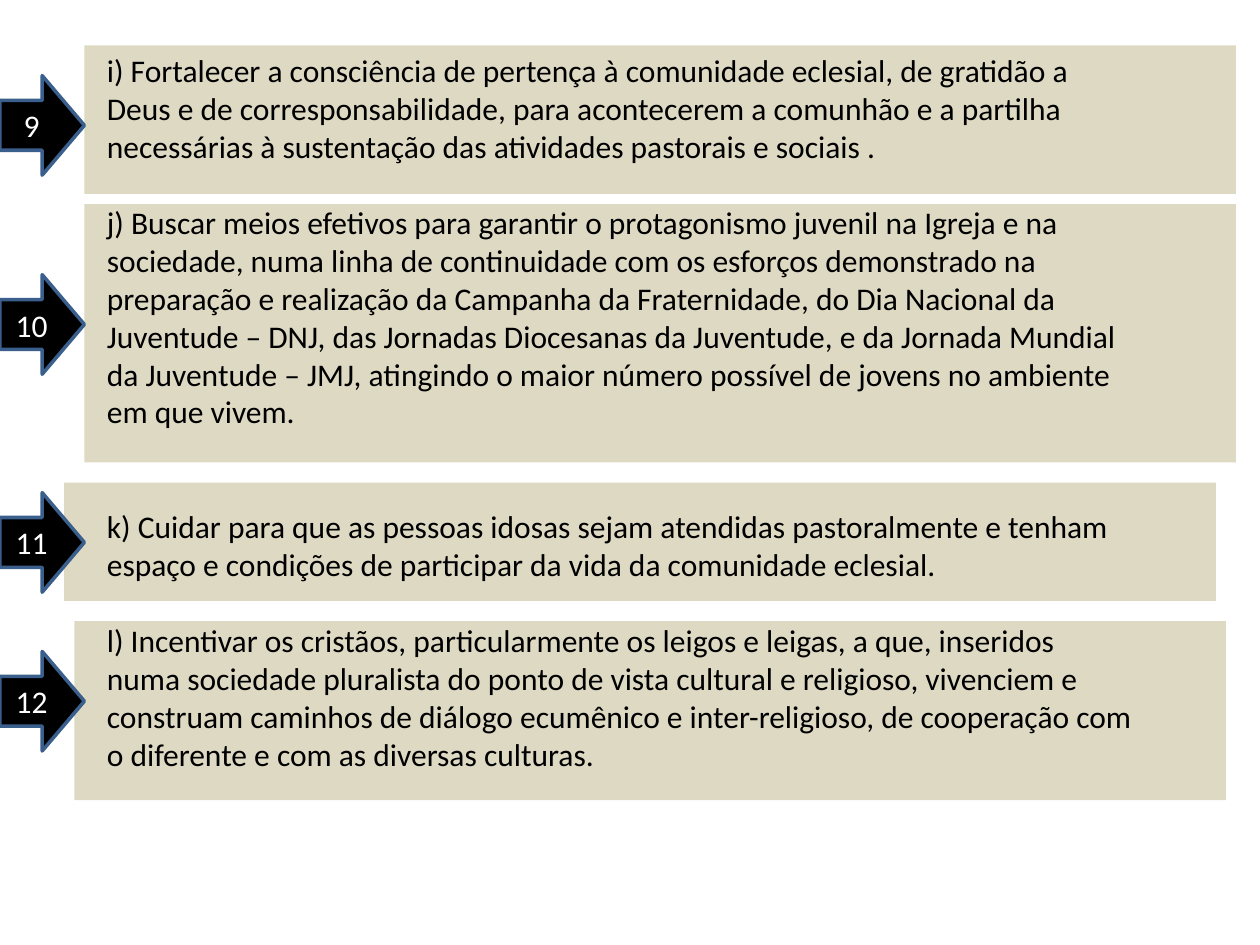
from dataclasses import dataclass

from pptx import Presentation
from pptx.dml.color import RGBColor
from pptx.enum.shapes import MSO_SHAPE
from pptx.enum.text import MSO_ANCHOR, MSO_AUTO_SIZE, PP_ALIGN
from pptx.util import Inches, Pt

RECTANGLE = MSO_SHAPE.RECTANGLE
RIGHT_ARROW = MSO_SHAPE.RIGHT_ARROW
MIDDLE = MSO_ANCHOR.MIDDLE
FIT_TEXT = MSO_AUTO_SIZE.SHAPE_TO_FIT_TEXT
LEFT, CENTER = PP_ALIGN.LEFT, PP_ALIGN.CENTER


@dataclass(frozen=True)
class Theme:
    font: str = "Calibri"
    size: Pt = Pt(18)
    text: RGBColor = RGBColor(0, 0, 0)
    panel: RGBColor = RGBColor(0xDD, 0xD9, 0xC3)
    arrow: RGBColor = RGBColor(0, 0, 0)
    arrow_text: RGBColor = RGBColor(0xFF, 0xFF, 0xFF)
    arrow_line: RGBColor = RGBColor(0x3A, 0x5F, 0x8C)
    line_width: Pt = Pt(2)


class SlideBuilder:
    """Draws the elements of the guidelines slide in one theme."""

    def __init__(self, slide, theme):
        self.slide = slide
        self.theme = theme

    def set_words(self, paragraph, words, color, align):
        paragraph.text = words
        paragraph.alignment = align
        font = paragraph.runs[0].font
        font.name, font.size = self.theme.font, self.theme.size
        font.color.rgb = color

    def shape(self, kind, left, top, width, height, fill):
        shape = self.slide.shapes.add_shape(
            kind, Inches(left), Inches(top), Inches(width), Inches(height))
        shape.shadow.inherit = False
        shape.fill.solid()
        shape.fill.fore_color.rgb = fill
        return shape

    def panel(self, left, top, height):
        panel = self.shape(RECTANGLE, left, top, 9.14, height, self.theme.panel)
        panel.line.fill.background()

    def arrow(self, top, number):
        arrow = self.shape(RIGHT_ARROW, 0, top, 0.67, 0.79, self.theme.arrow)
        arrow.line.color.rgb = self.theme.arrow_line
        arrow.line.width = self.theme.line_width
        frame = arrow.text_frame
        frame.vertical_anchor = MIDDLE
        self.set_words(frame.paragraphs[0], str(number), self.theme.arrow_text, CENTER)

    def guidelines(self, left, top, width, height, items):
        box = self.slide.shapes.add_textbox(
            Inches(left), Inches(top), Inches(width), Inches(height))
        frame = box.text_frame
        frame.word_wrap = True
        frame.auto_size = FIT_TEXT
        for index, (words, gap) in enumerate(items):
            paragraph = frame.add_paragraph() if index else frame.paragraphs[0]
            self.set_words(paragraph, words, self.theme.text, LEFT)
            paragraph.space_before = Pt(gap)


LINE_GAP = 22
GUIDELINES = [
    ("i) Fortalecer a consciência de pertença à comunidade eclesial, de gratidão a "
     "Deus e de corresponsabilidade, para acontecerem a comunhão e a partilha "
     "necessárias à sustentação das atividades pastorais e sociais .", 0),
    ("j) Buscar meios efetivos para garantir o protagonismo juvenil na Igreja e na "
     "sociedade, numa linha de continuidade com os esforços demonstrado na "
     "preparação e realização da Campanha da Fraternidade, do Dia Nacional da "
     "Juventude – DNJ, das Jornadas Diocesanas da Juventude, e da Jornada Mundial "
     "da Juventude – JMJ, atingindo o maior número possível de jovens no ambiente "
     "em que vivem.", LINE_GAP),
    ("k) Cuidar para que as pessoas idosas sejam atendidas pastoralmente e tenham "
     "espaço e condições de participar da vida da comunidade eclesial.", 2 * LINE_GAP),
    ("l) Incentivar os cristãos, particularmente os leigos e leigas, a que, inseridos "
     "numa sociedade pluralista do ponto de vista cultural e religioso, vivenciem e "
     "construam caminhos de diálogo ecumênico e inter-religioso, de cooperação com "
     "o diferente e com as diversas culturas.", LINE_GAP),
]
PANELS = [(0.59, 4.93, 1.42), (0.51, 3.83, 0.94), (0.67, 1.62, 2.05), (0.67, 0.36, 1.18)]
ARROW_TOPS = [0.6, 2.18, 3.91, 5.17]


def main():
    presentation = Presentation()
    presentation.slide_width, presentation.slide_height = Inches(10), Inches(7.5)
    slide = presentation.slides.add_slide(presentation.slide_layouts[6])
    builder = SlideBuilder(slide, Theme())
    for left, top, height in PANELS:
        builder.panel(left, top, height)
    builder.guidelines(0.75, 0.36, 8.35, 6.16, GUIDELINES)
    for number, top in enumerate(ARROW_TOPS, start=9):
        builder.arrow(top, number)
    presentation.save("out.pptx")


if __name__ == "__main__":
    main()
